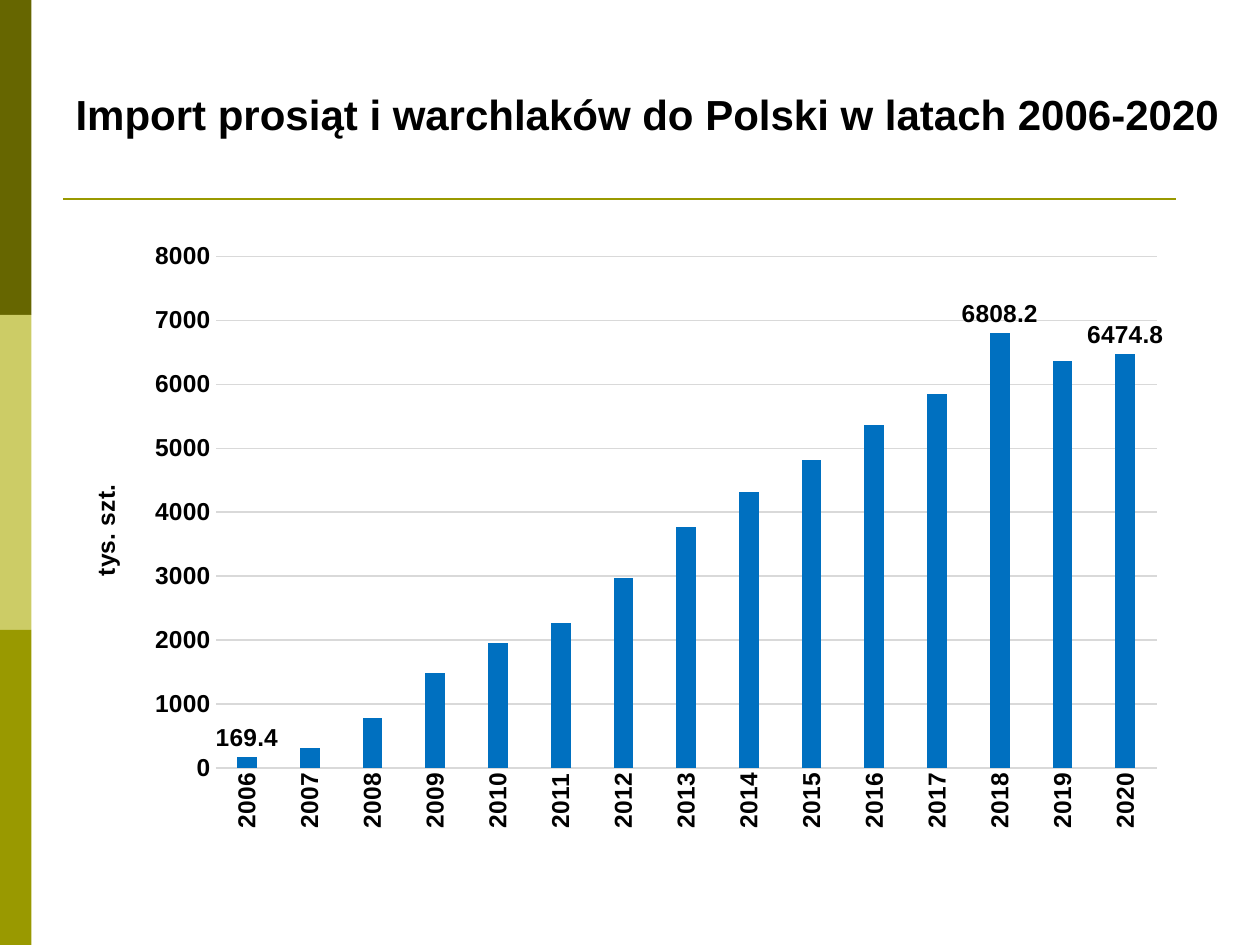
from lxml import etree
from pptx import Presentation
from pptx.chart.data import CategoryChartData
from pptx.dml.color import RGBColor
from pptx.enum.chart import XL_CHART_TYPE, XL_LABEL_POSITION, XL_TICK_MARK
from pptx.enum.shapes import MSO_CONNECTOR, MSO_SHAPE
from pptx.enum.text import MSO_ANCHOR, PP_ALIGN
from pptx.oxml.ns import qn
from pptx.util import Inches, Pt

COLUMN = XL_CHART_TYPE.COLUMN_CLUSTERED
OUTSIDE_END = XL_LABEL_POSITION.OUTSIDE_END
NO_TICKS = XL_TICK_MARK.NONE
RECTANGLE = MSO_SHAPE.RECTANGLE
STRAIGHT = MSO_CONNECTOR.STRAIGHT

BLACK = RGBColor(0x00, 0x00, 0x00)
GRID_GREY = RGBColor(0xD9, 0xD9, 0xD9)
COLUMN_BLUE = RGBColor(0x00, 0x70, 0xC0)
DARK_OLIVE = RGBColor(0x66, 0x66, 0x00)
PALE_OLIVE = RGBColor(0xCC, 0xCC, 0x66)
OLIVE = RGBColor(0x99, 0x99, 0x00)

HEADING = "Import prosiąt i warchlaków do Polski w latach 2006-2020"
UNIT = "tys. szt."
IMPORTS = [169.4, 308.4, 771.5, 1479.9, 1945.8, 2267.1, 2970.8, 3765.9,
           4310.8, 4812.2, 5358.2, 5844.1, 6808.2, 6366.5, 6474.8]
YEARS = [str(2006 + i) for i in range(len(IMPORTS))]
LABELLED_YEARS = ["2006", "2018", "2020"]
SIDE_BANDS = [DARK_OLIVE, PALE_OLIVE, OLIVE]
BAND_WIDTH, BAND_HEIGHT = 0.25, 2.5


def style_font(font, size):
    font.name = "Arial"
    font.size = Pt(size)
    font.bold = True
    font.color.rgb = BLACK


def style_line(line, color, width):
    line.color.rgb = color
    line.width = Pt(width)


def set_layout(element, position, **settings):
    """Give a chart element a manual layout, as fractions of the chart."""
    layout = element.find(qn("c:layout"))
    if layout is None:
        layout = etree.Element(qn("c:layout"))
        element.insert(position, layout)
    manual = etree.SubElement(layout, qn("c:manualLayout"))
    for tag, value in settings.items():
        etree.SubElement(manual, qn(f"c:{tag}")).set("val", str(value))


def turn_upward(element):
    body = element.find(".//" + qn("a:bodyPr"))
    body.set("rot", "-5400000")
    body.set("vert", "horz")


def add_decoration(slide):
    for i, color in enumerate(SIDE_BANDS):
        band = slide.shapes.add_shape(
            RECTANGLE, 0, Inches(i * BAND_HEIGHT),
            Inches(BAND_WIDTH), Inches(BAND_HEIGHT))
        band.shadow.inherit = False
        band.fill.solid()
        band.fill.fore_color.rgb = color
        band.line.fill.background()
    rule = slide.shapes.add_connector(
        STRAIGHT, Inches(0.5), Inches(1.58), Inches(9.33), Inches(1.58))
    style_line(rule.line, OLIVE, 1.5)
    etree.SubElement(rule.element.spPr, qn("a:effectLst"))


def add_heading(slide):
    title = slide.shapes.title
    title.left, title.top = Inches(0.5), Inches(0.25)
    title.width, title.height = Inches(9.38), Inches(0.9)
    frame = title.text_frame
    frame.text = HEADING
    frame.word_wrap = True
    frame.vertical_anchor = MSO_ANCHOR.BOTTOM
    frame.paragraphs[0].alignment = PP_ALIGN.LEFT
    style_font(frame.paragraphs[0].font, 24)


def add_import_chart(slide):
    data = CategoryChartData()
    data.categories = YEARS
    data.add_series("Series 1", IMPORTS)
    chart = slide.shapes.add_chart(
        COLUMN, Inches(0.5), Inches(1.86), Inches(8.84), Inches(4.88),
        data).chart
    chart.has_legend = False
    chart.has_title = False
    style_font(chart.font, 14)

    plot = chart.plots[0]
    plot.vary_by_categories = False
    plot.gap_width = 219
    plot.overlap = -27
    columns = plot.series[0]
    columns.format.fill.solid()
    columns.format.fill.fore_color.rgb = COLUMN_BLUE
    for year in LABELLED_YEARS:
        label = columns.points[YEARS.index(year)].data_label
        style_font(label.font, 14)
        label.position = OUTSIDE_END

    year_axis, value_axis = chart.category_axis, chart.value_axis
    for axis in (year_axis, value_axis):
        axis.major_tick_mark = axis.minor_tick_mark = NO_TICKS
        style_font(axis.tick_labels.font, 14)
    style_line(year_axis.format.line, GRID_GREY, 0.75)
    turn_upward(year_axis._element.find(qn("c:txPr")))

    value_axis.minimum_scale, value_axis.maximum_scale = 0, 8000
    value_axis.major_unit = 1000
    value_axis.format.line.fill.background()
    style_line(value_axis.major_gridlines.format.line, GRID_GREY, 0.75)
    unit = value_axis.axis_title
    unit.text_frame.text = UNIT
    style_font(unit.text_frame.paragraphs[0].font, 14)
    unit_title = unit._element
    turn_upward(unit_title)
    set_layout(unit_title, 1, xMode="edge", yMode="edge", x=0.02, y=0.4)

    plot_area = chart._chartSpace.find(".//" + qn("c:plotArea"))
    set_layout(plot_area, 0, layoutTarget="inner", xMode="edge", yMode="edge",
               x=0.137, y=0.036, w=0.845, h=0.832)


def main():
    presentation = Presentation()
    presentation.slide_width, presentation.slide_height = Inches(10), Inches(7.5)
    title_only = presentation.slide_layouts[5]
    slide = presentation.slides.add_slide(title_only)
    add_decoration(slide)
    add_heading(slide)
    add_import_chart(slide)
    presentation.save("out.pptx")


if __name__ == "__main__":
    main()
